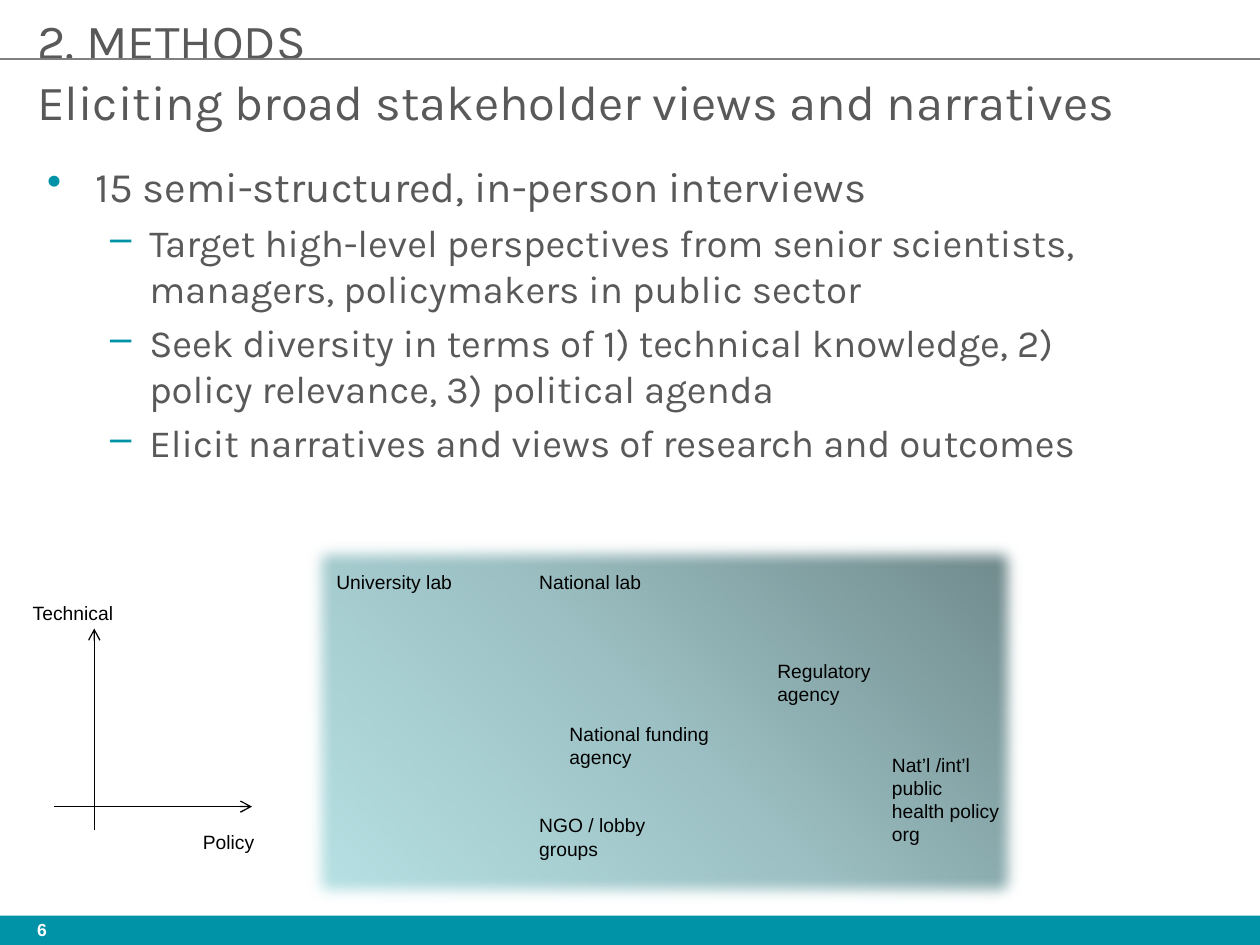
from lxml import etree
from pptx import Presentation
from pptx.dml.color import RGBColor
from pptx.enum.shapes import MSO_CONNECTOR, MSO_SHAPE
from pptx.enum.text import MSO_ANCHOR, MSO_AUTO_SIZE, PP_ALIGN
from pptx.oxml import parse_xml
from pptx.oxml.ns import nsdecls, qn
from pptx.util import Cm, Pt

LINE = MSO_CONNECTOR.STRAIGHT
RECT = MSO_SHAPE.RECTANGLE
TOP = MSO_ANCHOR.TOP
LEFT = PP_ALIGN.LEFT
GROW = MSO_AUTO_SIZE.SHAPE_TO_FIT_TEXT
FIXED = MSO_AUTO_SIZE.NONE

COLORS = {
    "text": "595959", "teal": "0092A7", "rule": "808080", "edge": "8AA6A8",
    "dark": "6D8688", "mid": "9BBFC2", "light": "B8E3E6",
    "black": "000000", "white": "FFFFFF",
}
HEAD, LABEL = "Karla", "Arial"

# Level, text
POINTS = [
    (0, "15 semi-structured, in-person interviews"),
    (1, "Target high-level perspectives from senior scientists, "
        "managers, policymakers in public sector"),
    (1, "Seek diversity in terms of 1) technical knowledge, "
        "2) policy relevance, 3) political agenda"),
    (1, "Elicit narratives and views of research and outcomes"),
]
# Per level: mark, size, left margin, hanging indent
LEVELS = [("•", 24, 0.97, 0.97), ("–", 22, 2.06, 0.79)]

# Text, left, top, width, height
LABELS = [
    ("University lab", 6.53, 11.38, 3.61, 0.74),
    ("National lab", 10.62, 11.38, 3.61, 0.74),
    ("National funding agency", 11.23, 14.43, 3.61, 1.19),
    ("NGO / lobby groups", 10.62, 16.28, 2.77, 1.19),
    ("Regulatory agency", 15.42, 13.16, 2.39, 1.19),
    ("Nat’l /int’l public\vhealth policy org", 17.73, 15.06, 2.77, 2.13),
    ("Technical", 0.41, 11.99, 3, 0.74),
    ("Policy", 3.84, 16.61, 1.85, 0.74),
]


def rgb(key):
    return RGBColor.from_string(COLORS[key])


def style(para, name, size, color, bold=False):
    para.alignment = LEFT
    for run in para.runs:
        font = run.font
        font.name, font.size, font.bold = name, Pt(size), bold
        font.color.rgb = rgb(color)


def place(shape, box):
    shape.left, shape.top, shape.width, shape.height = map(Cm, box)


def add_text(slide, text, box, name, size, color, bold=False, fit=FIXED):
    frame = slide.shapes.add_textbox(*map(Cm, box)).text_frame
    frame.word_wrap = True
    frame.auto_size = fit
    frame.text = text
    style(frame.paragraphs[0], name, size, color, bold)
    return frame


def add_line(slide, start, end, color, arrow=False):
    line = slide.shapes.add_connector(LINE, *map(Cm, start + end))
    line.line.width = Pt(0.75)
    line.line.color.rgb = rgb(color)
    if arrow:
        etree.SubElement(line.line._get_or_add_ln(), qn("a:tailEnd"), type="arrow")
    etree.SubElement(line._element.spPr, qn("a:effectLst"))


def add_rect(slide, box):
    rect = slide.shapes.add_shape(RECT, *map(Cm, box))
    rect.shadow.inherit = False
    return rect


def add_title(slide, text, box):
    title = slide.shapes.title
    place(title, box)
    frame = title.text_frame
    frame.text = text
    frame.auto_size = FIXED
    frame.vertical_anchor = TOP
    style(frame.paragraphs[0], HEAD, 28, "text")


def add_bullet(para, level):
    mark, size, margin, hang = LEVELS[level]
    props = para._p.get_or_add_pPr()
    props.set("marL", str(Cm(margin)))
    props.set("indent", str(-Cm(hang)))
    tint = etree.SubElement(props, qn("a:buClr"))
    etree.SubElement(tint, qn("a:srgbClr"), val=COLORS["teal"])
    etree.SubElement(props, qn("a:buChar"), char=mark)
    style(para, HEAD, size, "text")


def add_points(slide, box):
    frame = add_text(slide, POINTS[0][1], box, HEAD, 24, "text")
    for i, (level, text) in enumerate(POINTS):
        para = frame.paragraphs[0]
        if i:
            para = frame.add_paragraph()
            para.text = text
            para.level = level
            para.space_before = Pt(4.4)
        add_bullet(para, level)


def add_panel(slide, box):
    panel = add_rect(slide, box)
    panel.line.color.rgb = rgb("edge")
    panel.line.width = Pt(2)
    stops = "".join(
        f'<a:gs pos="{pos}"><a:srgbClr val="{COLORS[key]}"/></a:gs>'
        for pos, key in [(0, "dark"), (50000, "mid"), (100000, "light")])
    fill = parse_xml(f'<a:gradFill {nsdecls("a")}><a:gsLst>{stops}</a:gsLst>'
                     '<a:lin ang="8100000" scaled="0"/></a:gradFill>')
    props = panel._element.spPr
    props.find(qn("a:prstGeom")).addnext(fill)
    # Soft edge
    etree.SubElement(props.find(qn("a:effectLst")), qn("a:softEdge"), rad="127000")


def main():
    prs = Presentation()
    prs.slide_width, prs.slide_height = Cm(25.4), Cm(19.05)
    slide = prs.slides.add_slide(prs.slide_layouts[5])

    # Rule, footer band and page number
    add_line(slide, (0, 1.19), (25.4, 1.19), "rule")
    band = add_rect(slide, (0, 18.46, 25.4, 0.59))
    band.fill.solid()
    band.fill.fore_color.rgb = rgb("teal")
    band.line.fill.background()
    add_text(slide, "6", (0.5, 18.4, 2.08, 0.6), LABEL, 10, "white", True)

    # Headings and bullets
    add_title(slide, "2. METHODS", (0.5, 0.08, 23.4, 1.24))
    add_text(slide, "Eliciting broad stakeholder views and narratives",
             (0.5, 1.32, 23.4, 1.4), HEAD, 28, "text")
    add_points(slide, (0.7, 3.12, 23, 7.4))

    # Stakeholder map with its axes
    add_panel(slide, (6.1, 10.8, 14.6, 7.52))
    add_line(slide, (1.9, 16.74), (1.9, 12.67), "black", True)
    add_line(slide, (1.09, 16.26), (5.08, 16.26), "black", True)
    for text, *box in LABELS:
        add_text(slide, text, box, LABEL, 11, "black", fit=GROW)

    prs.save("out.pptx")


if __name__ == "__main__":
    main()
